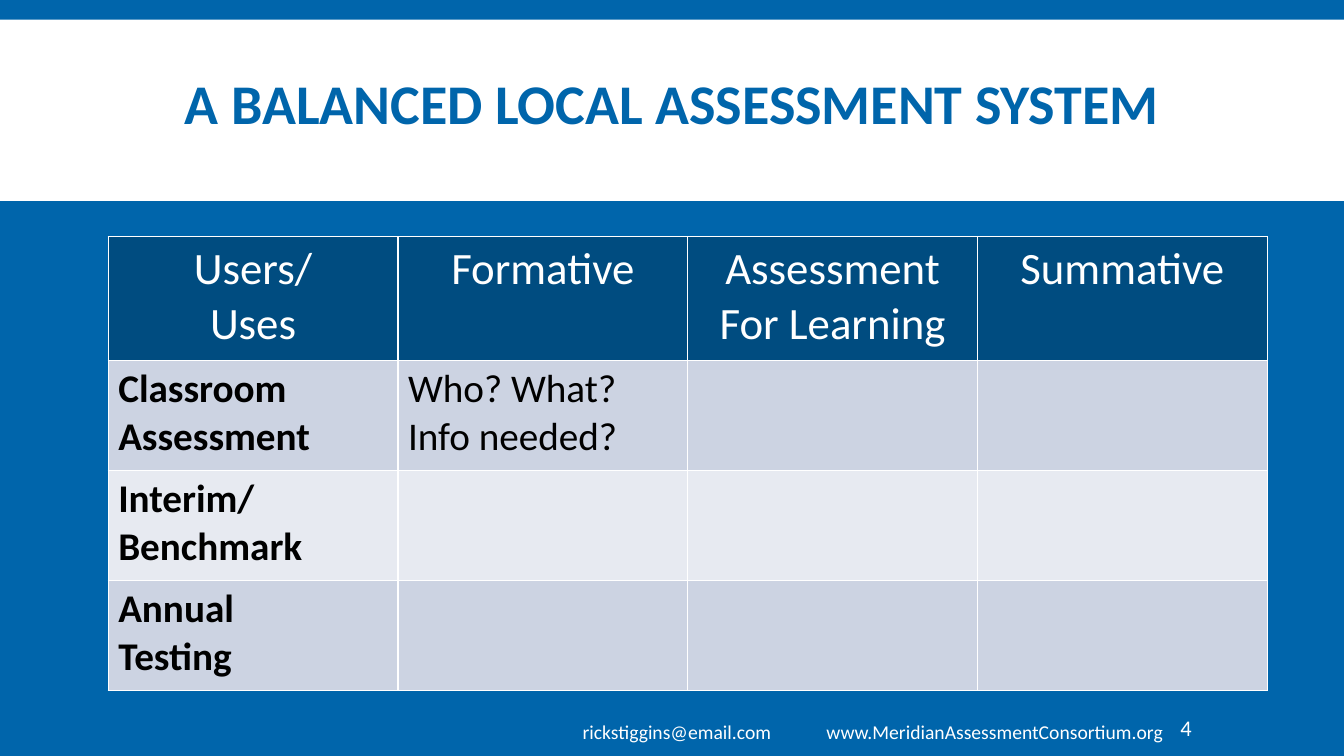
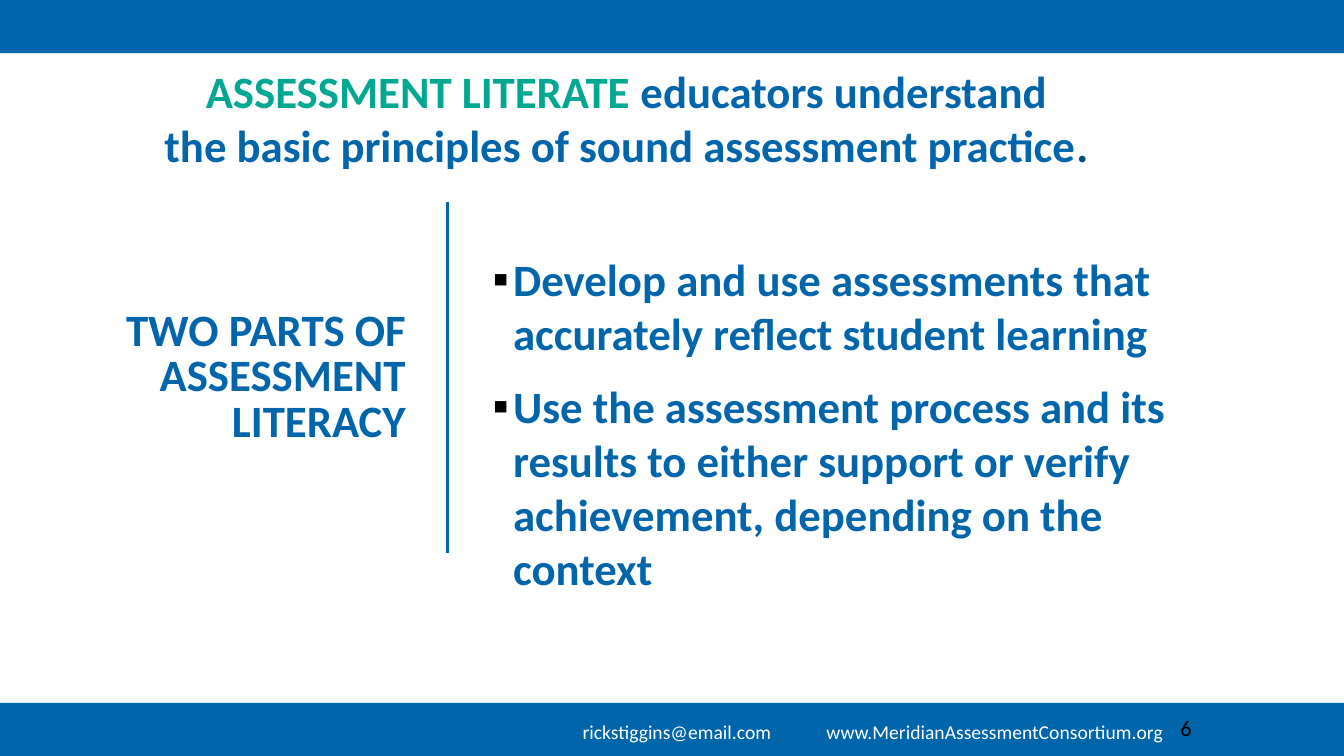
from dataclasses import dataclass

from lxml import etree
from pptx import Presentation
from pptx.dml.color import RGBColor
from pptx.enum import shapes, text
from pptx.oxml import ns
from pptx.util import Pt


@dataclass(frozen=True)
class Theme:
    font: str = "Calibri"
    blue: str = "0065AB"
    navy: str = "004C80"
    green: str = "00A892"
    white: str = "FFFFFF"
    black: str = "000000"
    row_dark: str = "CCD3E2"
    row_light: str = "E7EAF1"
    title: int = 40
    heading: int = 32
    cell: int = 28
    number: int = 16
    footer: int = 14


THEME = Theme()
WIDTH, HEIGHT = 960, 540
BAR = 38
CONTACTS = [("rickstiggins@email.com", 558), ("www.MeridianAssessmentConsortium.org", 838)]
LEFT, CENTER, RIGHT = text.PP_ALIGN.LEFT, text.PP_ALIGN.CENTER, text.PP_ALIGN.RIGHT
TOP, MIDDLE = text.MSO_ANCHOR.TOP, text.MSO_ANCHOR.MIDDLE


def rgb(color):
    return RGBColor.from_string(color)


def child(parent, tag, **attributes):
    return etree.SubElement(parent, ns.qn(tag), attributes)


def add_bullet(paragraph, symbol, color, indent):
    properties = paragraph._p.get_or_add_pPr()
    properties.set("marL", str(Pt(indent)))
    properties.set("indent", str(Pt(-indent)))
    child(child(properties, "a:buClr"), "a:srgbClr", val=color)
    child(properties, "a:buFont", typeface=THEME.font)
    child(properties, "a:buChar", char=symbol)


def write(frame, paragraphs, size, color=THEME.blue, bold=False, align=LEFT,
          line_spacing=None, before=0, after=0, bullet=None):
    for index, content in enumerate(paragraphs):
        paragraph = frame.paragraphs[0] if index == 0 else frame.add_paragraph()
        paragraph.alignment = align
        paragraph.line_spacing = line_spacing
        paragraph.space_before, paragraph.space_after = Pt(before), Pt(after)
        if bullet:
            add_bullet(paragraph, bullet, THEME.black, 14.4)
        runs = [(content, color)] if isinstance(content, str) else content
        for words, run_color in runs:
            run = paragraph.add_run()
            run.text = words
            run.font.name, run.font.size, run.font.bold = THEME.font, Pt(size), bold
            run.font.color.rgb = rgb(run_color)


def add_text(slide, box, paragraphs, anchor=MIDDLE, inset=7.2, **style):
    frame = slide.shapes.add_textbox(*map(Pt, box)).text_frame
    frame.word_wrap = True
    frame.vertical_anchor = anchor
    frame.margin_left = Pt(inset)
    write(frame, paragraphs, **style)


def add_band(slide, top, height, color):
    band = slide.shapes.add_shape(shapes.MSO_SHAPE.RECTANGLE, 0, Pt(top), Pt(WIDTH), Pt(height))
    band.shadow.inherit = False
    band.fill.solid()
    band.fill.fore_color.rgb = rgb(color)
    band.line.fill.background()


def add_divider(slide, x, top, bottom):
    divider = slide.shapes.add_connector(
        shapes.MSO_CONNECTOR.STRAIGHT, Pt(x), Pt(top), Pt(x), Pt(bottom))
    divider.line.color.rgb = rgb(THEME.blue)
    divider.line.width = Pt(2)
    child(divider._element.spPr, "a:effectLst")


def add_footer(slide, number, number_color):
    for contact, right in CONTACTS:
        add_text(slide, (right - 270, 505.5, 270, 34.5), [contact],
                 size=THEME.footer, color=THEME.white, align=RIGHT)
    add_text(slide, (839.5, 505.5, 74, 29), [number], inset=3.6,
             size=THEME.number, color=number_color)


def style_cell(cell, fill):
    properties = cell._tc.get_or_add_tcPr()
    for side in ("a:lnL", "a:lnR", "a:lnT", "a:lnB"):
        border = child(properties, side, w=str(Pt(1)))
        child(child(border, "a:solidFill"), "a:srgbClr", val=THEME.white)
    cell.fill.solid()
    cell.fill.fore_color.rgb = rgb(fill)


def add_matrix(slide, left, top, column_width, header_height, row_height, rows):
    columns = len(rows[0])
    height = header_height + row_height * (len(rows) - 1)
    matrix = slide.shapes.add_table(
        len(rows), columns, Pt(left), Pt(top), Pt(column_width * columns), Pt(height)).table
    for column in matrix.columns:
        column.width = Pt(column_width)
    for r, entries in enumerate(rows):
        header = r == 0
        matrix.rows[r].height = Pt(header_height if header else row_height)
        fill = THEME.navy if header else THEME.row_dark if r % 2 else THEME.row_light
        for c, lines in enumerate(entries):
            cell = matrix.cell(r, c)
            style_cell(cell, fill)
            if header:
                write(cell.text_frame, lines, THEME.heading, THEME.white, align=CENTER)
            else:
                write(cell.text_frame, lines, THEME.cell, THEME.black, bold=c == 0)


def new_slide(deck, background):
    slide = deck.slides.add_slide(deck.slide_layouts[6])
    slide.background.fill.solid()
    slide.background.fill.fore_color.rgb = rgb(background)
    return slide


def add_title(slide, box, title, size, align):
    add_text(slide, box, [title], size=size, bold=True, align=align, line_spacing=0.85)


def build_system(deck):
    slide = new_slide(deck, THEME.blue)
    add_band(slide, 14, 129.5, THEME.white)
    add_title(slide, (66, 19.5, 828, 114.5), "A BALANCED LOCAL ASSESSMENT SYSTEM",
              THEME.title, CENTER)
    add_footer(slide, "4", THEME.white)
    add_matrix(slide, 77.3, 169, 207, 88.5, 78.5, [
        [["Users/", "Uses"], ["Formative"], ["Assessment For Learning"], ["Summative"]],
        [["Classroom Assessment"], ["Who? What? Info needed?"], [], []],
        [["Interim/", "Benchmark"], [], [], []],
        [["Annual", "Testing"], [], [], []],
    ])


def build_literacy(deck):
    slide = new_slide(deck, THEME.white)
    for top in (0, HEIGHT - BAR):
        add_band(slide, top, BAR, THEME.blue)
    add_title(slide, (0, 104.5, 297, 331), "TWO PARTS OF ASSESSMENT LITERACY",
              THEME.heading, RIGHT)
    add_divider(slide, 319.5, 144.5, 395)
    add_text(slide, (345, 130.5, 520, 343.5), [
        "Develop and use assessments that accurately reflect student learning",
        "Use the assessment process and its results to either support or verify "
        "achievement, depending on the context",
    ], size=THEME.heading, bold=True, before=12, after=2, bullet="▪")
    add_footer(slide, "6", THEME.black)
    add_text(slide, (50, 42, 795, 85), [
        [("ASSESSMENT LITERATE ", THEME.green), ("educators understand", THEME.blue)],
        [("the basic principles of sound assessment practice", THEME.blue), (".", THEME.navy)],
    ], anchor=TOP, size=THEME.heading, bold=True, align=CENTER)


def main():
    deck = Presentation()
    deck.slide_width, deck.slide_height = Pt(WIDTH), Pt(HEIGHT)
    build_system(deck)
    build_literacy(deck)
    deck.save("out.pptx")


if __name__ == "__main__":
    main()
